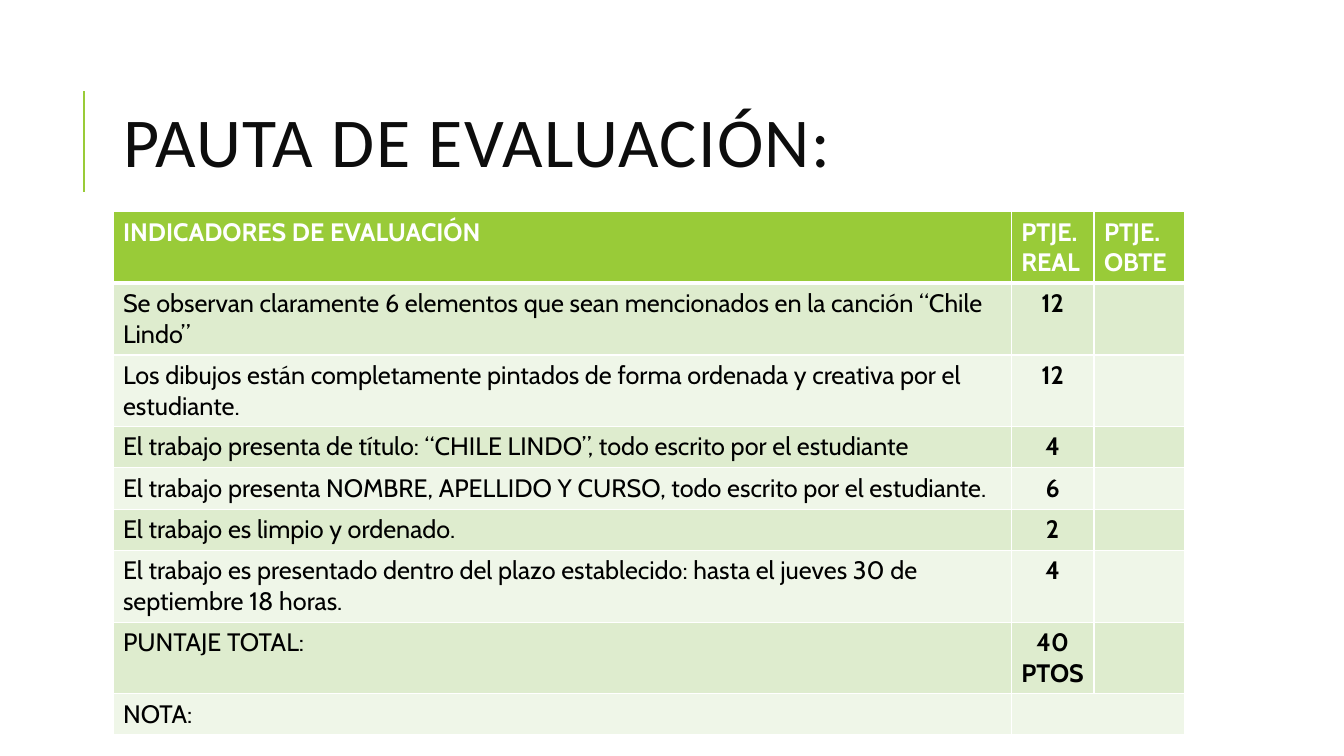
import pptx
import pptx.util
import pptx.dml.color
import pptx.enum.shapes
import pptx.enum.text
import pptx.oxml.ns
from lxml import etree

Inches, Pt = pptx.util.Inches, pptx.util.Pt
RGBColor = pptx.dml.color.RGBColor
PP_ALIGN = pptx.enum.text.PP_ALIGN
qn = pptx.oxml.ns.qn

GREEN = RGBColor(0x99, 0xCB, 0x38)
BAND_DARK = RGBColor(0xDE, 0xEC, 0xCE)
BAND_LIGHT = RGBColor(0xEF, 0xF6, 0xE8)
WHITE = RGBColor(0xFF, 0xFF, 0xFF)
BLACK = RGBColor(0, 0, 0)
TITLE_INK = RGBColor(0x0D, 0x0D, 0x0D)

HEADINGS = ["INDICADORES DE EVALUACIÓN", "PTJE. REAL", "PTJE. OBTE"]
CRITERIA = [
    ("Se observan claramente 6 elementos que sean mencionados en la canción “Chile Lindo”", "12"),
    ("Los dibujos están completamente pintados de forma ordenada y creativa por el estudiante.", "12"),
    ("El trabajo presenta de título: “CHILE LINDO”, todo escrito por el estudiante", "4"),
    ("El trabajo presenta NOMBRE, APELLIDO Y CURSO, todo escrito por el estudiante.", "6"),
    ("El trabajo es limpio y ordenado.", "2"),
    ("El trabajo es presentado dentro del plazo establecido: hasta el jueves 30 de septiembre 18 horas.", "4"),
    ("PUNTAJE TOTAL:", "40 PTOS"),
    ("NOTA:", ""),
]
COLUMN_WIDTHS = [8.91, 0.82, 0.9]


def add_run(p, text, font, size, color, bold=False):
    r = p.add_run()
    r.text = text
    r.font.name, r.font.size, r.font.bold = font, Pt(size), bold
    r.font.color.rgb = color
    return r


def add_title(s, text):
    title = s.shapes.title
    title.left, title.top = Inches(1.12), Inches(0.64)
    title.width, title.height = Inches(10.63), Inches(1.64)
    tf = title.text_frame
    tf.auto_size = pptx.enum.text.MSO_AUTO_SIZE.NONE
    tf.vertical_anchor = pptx.enum.text.MSO_ANCHOR.MIDDLE
    p = tf.paragraphs[0]
    p.alignment, p.line_spacing = PP_ALIGN.LEFT, 0.8
    r = add_run(p, text, "Calibri", 50, TITLE_INK)
    r.font._element.set("spc", "100")


def add_rule(s, x, top, bottom):
    rule = s.shapes.add_connector(pptx.enum.shapes.MSO_CONNECTOR.STRAIGHT,
                                  Inches(x), Inches(bottom), Inches(x), Inches(top))
    rule.line.color.rgb, rule.line.width = GREEN, Pt(1.5)
    etree.SubElement(rule._element.spPr, qn("a:effectLst"))


def set_borders(cell, bottom=1, top=1):
    # Border elements come before the fill
    tcPr = cell._tc.get_or_add_tcPr()
    widths = {"lnL": 1, "lnR": 1, "lnT": top, "lnB": bottom}
    for i, (side, width) in enumerate(widths.items()):
        ln = etree.Element(qn("a:" + side), w=str(Pt(width)))
        fill = etree.SubElement(ln, qn("a:solidFill"))
        etree.SubElement(fill, qn("a:srgbClr"), val=str(WHITE))
        tcPr.insert(i, ln)


def fill_cell(cell, text, fill, color, bold, align=PP_ALIGN.LEFT):
    cell.fill.solid()
    cell.fill.fore_color.rgb = fill
    p = cell.text_frame.paragraphs[0]
    p.alignment = align
    if text:
        add_run(p, text, "Cabin", 18, color, bold)
    else:
        p.font.size = Pt(18)


def add_rubric(s):
    table = s.shapes.add_table(len(CRITERIA) + 1, len(HEADINGS), Inches(1.12), Inches(2.1),
                               Inches(10.63), Inches(3.96)).table
    for column, width in zip(table.columns, COLUMN_WIDTHS):
        column.width = Inches(width)
    for i, row in enumerate(table.rows):
        row.height = Inches(0.41 if i else 0.68)

    # Heading row
    for cell, heading in zip(table.rows[0].cells, HEADINGS):
        fill_cell(cell, heading, GREEN, WHITE, True)
        set_borders(cell, bottom=3)

    # Criteria with their points, in alternating bands
    for i, (criterion, points) in enumerate(CRITERIA, 1):
        band = BAND_DARK if i % 2 else BAND_LIGHT
        for j, text in enumerate((criterion, points, "")):
            cell = table.cell(i, j)
            fill_cell(cell, text, band, BLACK, j == 1,
                      PP_ALIGN.CENTER if j == 1 else PP_ALIGN.LEFT)
            set_borders(cell, top=3 if i == 1 else 1)

    # The grade spans both points columns
    last = len(CRITERIA)
    table.cell(last, 1).merge(table.cell(last, 2))


def main():
    prs = pptx.Presentation()
    prs.slide_width, prs.slide_height = Inches(13.33), Inches(7.5)
    s = prs.slides.add_slide(prs.slide_layouts[5])
    add_rule(s, 0.83, 0.9, 1.9)
    add_title(s, "PAUTA DE EVALUACIÓN:")
    add_rubric(s)
    prs.save("out.pptx")


if __name__ == "__main__":
    main()
